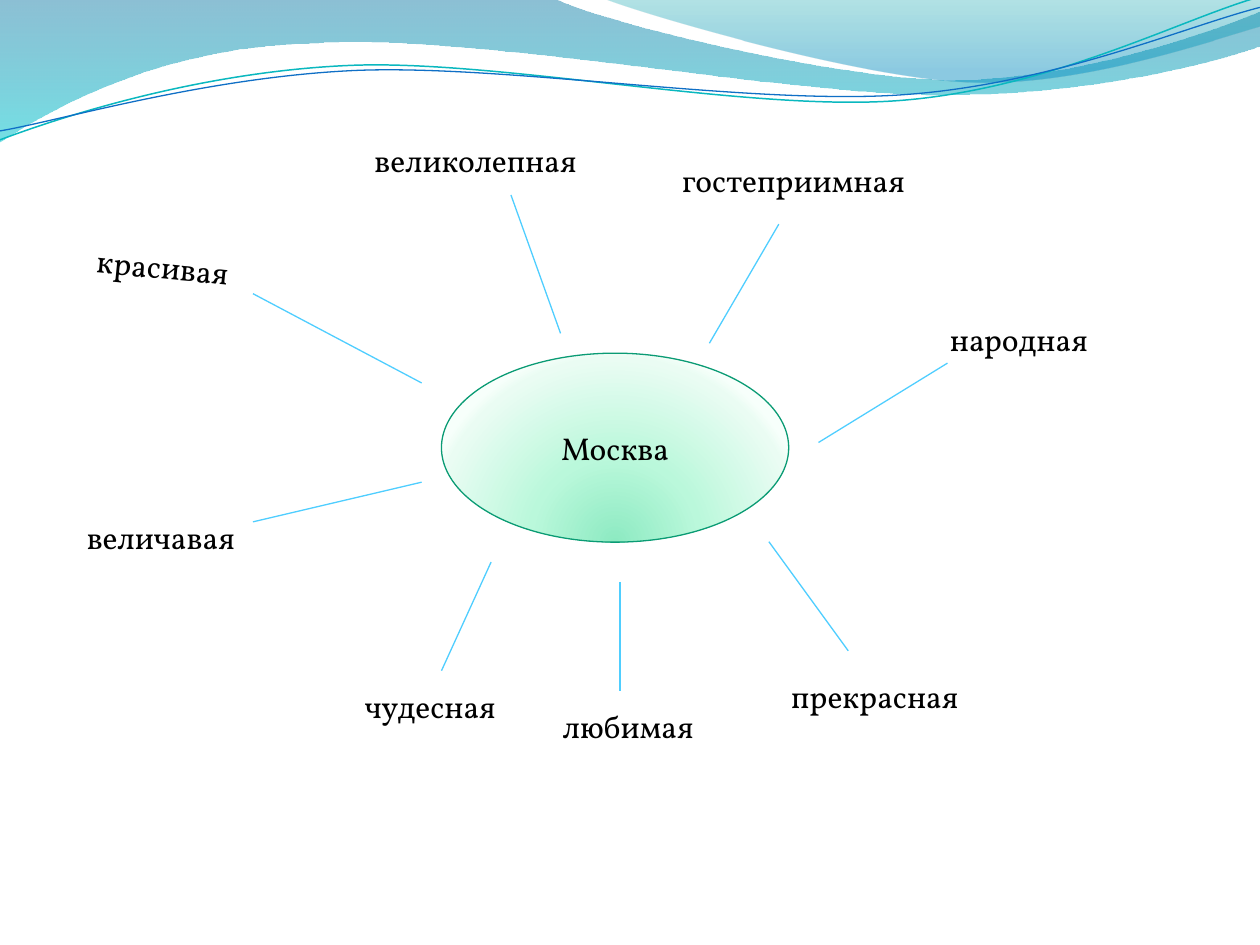
from lxml.etree import SubElement
from pptx import Presentation
from pptx.dml.color import RGBColor
from pptx.enum.shapes import MSO_CONNECTOR, MSO_SHAPE
from pptx.enum.text import MSO_ANCHOR, MSO_AUTO_SIZE, PP_ALIGN
from pptx.oxml.ns import qn
from pptx.util import Cm, Pt

COLORS = {
    "text": "000000", "ray": "4FCEFF", "oval_edge": "0A9B74",
    "teal_wave": "0AB8BF", "blue_wave": "0F6FC6",
    "band_top": "0074A1", "band_bottom": "00C6CF",
    "glow_top": "00A1A9", "glow_bottom": "008BBF",
    "oval_core": "8DEAC2", "oval_mid": "BAF8DB",
    "oval_pale": "EAFCF3", "oval_rim": "F7FFFB",
}
FONT = {"name": "Vollkorn", "size": Pt(18)}

# Each wave: start, then line ends (x, y) or cubic Bezier curves (two controls, end), in cm.
# A filled wave has gradient stops (position, colour, opacity); an open one has a line.
WAVES = [
    {"start": (0, 0),
     "parts": [(11.18, -0.03),
               (12.09, 0.43, 16.87, 1.6, 19.25, 1.6),
               (21.67, 1.6, 24.33, 0.66, 25.4, 0.23),
               (25.43, 0.91),
               (24.97, 1.12, 22.1, 1.93, 18.95, 1.91),
               (15.8, 1.91, 9.7, 0.71, 6.53, 0.86),
               (3.28, 0.91, 1.17, 2.11, -0.03, 2.87),
               (0, 0)],
     "stops": [(0, "band_top", 45), (100, "band_bottom", 55)]},
    {"start": (12.17, -0.03),
     "parts": [(12.93, 0.28, 17.32, 1.57, 19.53, 1.65),
               (21.74, 1.75, 24.41, 0.81, 25.4, 0.53),
               (25.4, 0),
               (12.17, -0.03)],
     "stops": [(0, "glow_top", 30), (80, "glow_bottom", 45)]},
    {"start": (0, 2.82),
     "parts": [(1.22, 2.36, 4.01, 1.45, 7.04, 1.32),
               (10.03, 1.19, 15.06, 2.26, 18.11, 2.03),
               (21.16, 1.8, 23.83, 0.38, 25.35, -0.05)],
     "line": ("teal_wave", 0.85)},
    {"start": (0, 2.64),
     "parts": [(1.19, 2.44, 4.17, 1.55, 7.19, 1.42),
               (10.24, 1.3, 15.16, 2.13, 18.21, 1.91),
               (21.23, 1.7, 23.9, 0.53, 25.4, 0.15)],
     "line": ("blue_wave", 0.75)},
]

# Word, its box (left, top, width), its tilt, and the ray (x1, y1, x2, y2), in cm
EPITHETS = [
    ("красивая", (1.7, 4.93, 4.39), 5.7, (5.1, 5.92, 8.5, 7.72)),
    ("величавая", (1.5, 10.31, 3.61), 0, (8.5, 9.72, 5.1, 10.52)),
    ("великолепная", (7.3, 2.72, 5), 0, (10.3, 3.93, 11.3, 6.72)),
    ("гостеприимная", (13.5, 3.12, 5.99), 0, (15.7, 4.52, 14.3, 6.92)),
    ("народная", (18.9, 6.32, 3.61), 0, (19.1, 7.32, 16.5, 8.92)),
    ("прекрасная", (15.7, 13.52, 4.6), 0, (15.5, 10.92, 17.1, 13.12)),
    ("любимая", (11.1, 14.12, 4.19), 0, (12.5, 11.73, 12.5, 13.92)),
    ("чудесная", (7.1, 13.72, 4.6), 0, (9.9, 11.33, 8.9, 13.52)),
]


def fill_gradient(shape, stops, radial=False):
    """Fill from top to bottom, or outwards from below the shape if radial."""
    shape.fill.background()
    props = shape._element.spPr
    gradient = props.makeelement(qn("a:gradFill"), {"rotWithShape": "1"})
    stop_list = SubElement(gradient, qn("a:gsLst"))
    for position, color, opacity in stops:
        stop = SubElement(stop_list, qn("a:gs"), pos=str(position * 1000))
        tint = SubElement(stop, qn("a:srgbClr"), val=COLORS[color])
        if opacity < 100:
            SubElement(tint, qn("a:alpha"), val=str(opacity * 1000))
    if radial:
        circle = SubElement(gradient, qn("a:path"), {"path": "circle"})
        SubElement(circle, qn("a:fillToRect"), l="50000", t="130000", r="50000", b="-30000")
    else:
        SubElement(gradient, qn("a:lin"), ang="5400000", scaled="0")
    props.replace(props.find(qn("a:noFill")), gradient)


def write_word(shape, word):
    para = shape.text_frame.paragraphs[0]
    span = para.add_run()
    span.text = word
    for key, value in FONT.items():
        setattr(span.font, key, value)
    span.font.color.rgb = RGBColor.from_string(COLORS["text"])
    return para


deck = Presentation()
deck.slide_width, deck.slide_height = Cm(25.4), Cm(19.05)
page = deck.slides.add_slide(deck.slide_layouts[6])

for wave in WAVES:
    points = [(Cm(x), Cm(y)) for part in wave["parts"]
              for x, y in zip(part[::2], part[1::2])]
    start_x, start_y = wave["start"]
    builder = page.shapes.build_freeform(Cm(start_x), Cm(start_y))
    builder.add_line_segments(points, close="stops" in wave)
    shape = builder.convert_to_shape()
    shape.shadow.inherit = False

    # Join the three points of each curve into one Bezier segment
    segments = iter(shape._element.spPr.findall(".//" + qn("a:lnTo")))
    for part in wave["parts"]:
        segment = next(segments)
        if len(part) == 6:
            curve = segment.makeelement(qn("a:cubicBezTo"), {})
            segment.addprevious(curve)
            for corner in (segment, next(segments), next(segments)):
                curve.append(corner[0])
                corner.getparent().remove(corner)

    if "stops" in wave:
        fill_gradient(shape, wave["stops"])
        shape.line.fill.background()
    else:
        color, width = wave["line"]
        shape.fill.background()
        shape.line.color.rgb = RGBColor.from_string(COLORS[color])
        shape.line.width = Pt(width)

oval = page.shapes.add_shape(MSO_SHAPE.OVAL, Cm(8.9), Cm(7.12), Cm(7), Cm(3.81))
oval.shadow.inherit = False
fill_gradient(oval, [(0, "oval_core", 100), (43, "oval_mid", 100),
                     (93, "oval_pale", 100), (100, "oval_rim", 100)], radial=True)
oval.line.color.rgb = RGBColor.from_string(COLORS["oval_edge"])
oval.line.width = Pt(0.75)
oval.text_frame.vertical_anchor = MSO_ANCHOR.MIDDLE
write_word(oval, "Москва").alignment = PP_ALIGN.CENTER

for word, (left, top, width), tilt, ends in EPITHETS:
    ray = page.shapes.add_connector(MSO_CONNECTOR.STRAIGHT, *[Cm(end) for end in ends])
    ray.line.color.rgb = RGBColor.from_string(COLORS["ray"])
    ray.line.width = Pt(0.75)
    SubElement(ray._element.spPr, qn("a:effectLst"))

    box = page.shapes.add_textbox(Cm(left), Cm(top), Cm(width), Cm(1.02))
    box.rotation = tilt
    box.text_frame.word_wrap = True
    box.text_frame.auto_size = MSO_AUTO_SIZE.SHAPE_TO_FIT_TEXT
    write_word(box, word)

deck.save("out.pptx")
